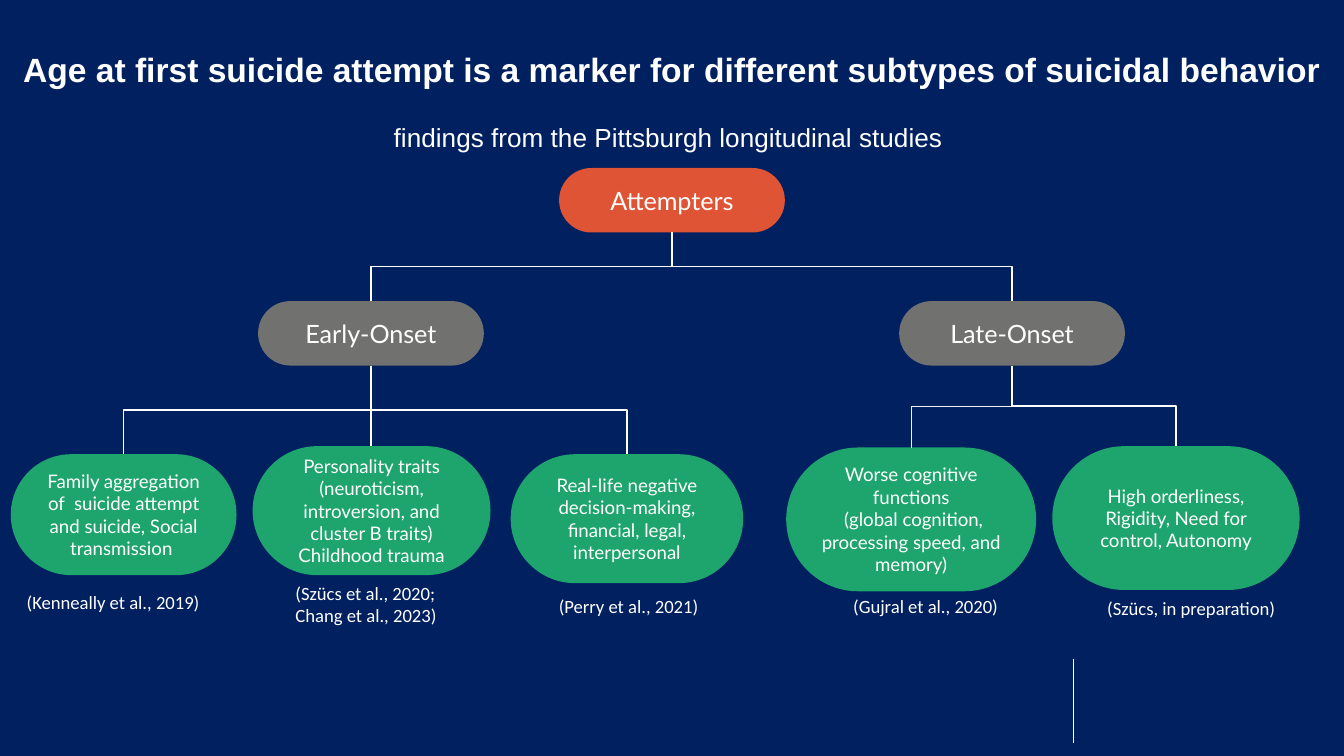
from pptx import Presentation
from pptx.dml.color import RGBColor
from pptx.enum.shapes import MSO_CONNECTOR as Link, MSO_SHAPE as Shape
from pptx.enum.text import MSO_ANCHOR as Anchor, MSO_AUTO_SIZE as AutoSize, PP_ALIGN as Align
from pptx.oxml.ns import qn
from pptx.util import Inches, Pt
from lxml import etree

NAVY = RGBColor(0x00, 0x20, 0x60)
WHITE = RGBColor(0xFF, 0xFF, 0xFF)
PALE = RGBColor(0xF2, 0xF2, 0xF2)
ORANGE = RGBColor(0xDF, 0x54, 0x34)
GRAY = RGBColor(0x71, 0x71, 0x6F)
GREEN = RGBColor(0x1E, 0xA4, 0x6D)

prs = Presentation()
prs.slide_width = Inches(10)
prs.slide_height = prs.slide_width * 9 // 16
slide = prs.slides.add_slide(prs.slide_layouts[6])
slide.background.fill.solid()
slide.background.fill.fore_color.rgb = NAVY


def add_run(paragraph, text, size, font, bold=False):
    run = paragraph.add_run()
    run.text = text
    run.font.size = Pt(size)
    run.font.name = font
    run.font.bold = bold
    run.font.color.rgb = WHITE


def style_line(line, color, width):
    """Set the stroke and switch off the theme shadow."""
    line.line.color.rgb = color
    line.line.width = Pt(width)
    etree.SubElement(line._element.spPr, qn("a:effectLst"))


# Short rule at the lower right
rule = slide.shapes.add_connector(
    Link.STRAIGHT, Inches(7.99), Inches(4.9), Inches(7.99), Inches(5.53))
style_line(rule, WHITE, 0.5)

# Title and subtitle
title = slide.shapes.add_textbox(Inches(0), Inches(-0.25), Inches(10), Inches(1.7))
frame = title.text_frame
frame.word_wrap = True
frame.vertical_anchor = Anchor.MIDDLE
frame.margin_left = frame.margin_right = frame.margin_top = frame.margin_bottom = 0
heading = frame.paragraphs[0]
heading.alignment = Align.CENTER
heading.line_spacing = 2.0
heading.space_after = Pt(6)
add_run(heading, "Age at first suicide attempt is a marker for different subtypes of suicidal behavior",
        18, "Arial", bold=True)
heading.add_line_break()
add_run(heading, "findings from the Pittsburgh longitudinal studies ", 14, "Arial")

# Tree nodes: key, left, top, width, height, fill, text size, paragraphs
nodes = [
    ("attempters", 4.16, 1.25, 1.68, 0.48, ORANGE, 13.5, ["Attempters"]),
    ("late", 6.69, 2.24, 1.68, 0.48, GRAY, 13.5, ["Late-Onset"]),
    ("early", 1.92, 2.24, 1.68, 0.48, GRAY, 13.5, ["Early-Onset"]),
    ("family", 0.08, 3.38, 1.68, 0.9, GREEN, 10,
     ["Family aggregation of  suicide attempt and suicide, Social transmission "]),
    ("personality", 1.88, 3.32, 1.77, 0.96, GREEN, 10,
     ["Personality traits", "(neuroticism, introversion, and cluster B traits)", "Childhood trauma"]),
    ("decisions", 3.8, 3.38, 1.73, 0.96, GREEN, 10,
     ["Real-life negative decision-making, financial, legal, interpersonal"]),
    ("cognition", 5.85, 3.33, 1.86, 1.07, GREEN, 10,
     ["Worse cognitive functions", " (global cognition, processing speed, and memory)"]),
    ("orderliness", 7.83, 3.32, 1.84, 1.07, GREEN, 10,
     ["High orderliness, Rigidity, Need for control, Autonomy"]),
]
placed = {}
for key, left, top, width, height, fill, size, lines in nodes:
    node = slide.shapes.add_shape(
        Shape.ROUNDED_RECTANGLE, Inches(left), Inches(top), Inches(width), Inches(height))
    node.adjustments[0] = 0.5
    node.shadow.inherit = False
    node.fill.solid()
    node.fill.fore_color.rgb = fill
    node.line.fill.background()
    frame = node.text_frame
    frame.word_wrap = True
    frame.vertical_anchor = Anchor.MIDDLE
    frame.margin_left = frame.margin_right = frame.margin_top = frame.margin_bottom = Inches(0.1)
    for i, text in enumerate(lines):
        paragraph = frame.add_paragraph() if i else frame.paragraphs[0]
        paragraph.alignment = Align.CENTER
        add_run(paragraph, text, size, "Lato")
    placed[key] = node

# Branches: bottom centre of the parent to top centre of the child
branches = [
    ("attempters", "late", WHITE), ("attempters", "early", WHITE),
    ("early", "personality", WHITE), ("early", "family", WHITE),
    ("late", "cognition", PALE), ("late", "orderliness", WHITE),
    ("early", "decisions", WHITE),
]
for parent_key, child_key, color in branches:
    parent, child = placed[parent_key], placed[child_key]
    start_x, start_y = parent.left + parent.width // 2, parent.top + parent.height
    end_x, end_y = child.left + child.width // 2, child.top
    drop, span = end_y - start_y, abs(end_x - start_x)
    if span < Inches(0.02):
        span = 0
    # An elbow leaves sideways, so it is laid out unrotated and then turned downwards
    left = (start_x + end_x - drop) // 2
    top = (start_y + end_y - span) // 2
    branch = slide.shapes.add_connector(Link.ELBOW, left, top, left + drop, top + span)
    transform = branch._element.spPr.find(qn("a:xfrm"))
    if end_x > start_x:
        transform.set("rot", "16200000")
        transform.set("flipH", "1")
    else:
        transform.set("rot", "5400000")
    style_line(branch, color, 0.75)

# Citations: left, top, width, height, vertical inset, text
citations = [
    (0.1, 4.31, 1.55, 0.37, 0.1, "(Kenneally et al., 2019)"),
    (2.1, 4.23, 1.29, 0.54, 0.1, "(Szücs et al., 2020; Chang et al., 2023)"),
    (4.06, 4.34, 1.29, 0.37, 0.1, "(Perry et al., 2021)"),
    (6.25, 4.34, 1.34, 0.37, 0.1, "(Gujral et al., 2020)"),
    (8.14, 4.39, 1.6, 0.27, 0.05, "(Szücs, in preparation)"),
]
for left, top, width, height, inset, text in citations:
    citation = slide.shapes.add_textbox(Inches(left), Inches(top), Inches(width), Inches(height))
    frame = citation.text_frame
    frame.word_wrap = True
    frame.auto_size = AutoSize.SHAPE_TO_FIT_TEXT
    frame.margin_left = frame.margin_right = Inches(0.1)
    frame.margin_top = frame.margin_bottom = Inches(inset)
    add_run(frame.paragraphs[0], text, 10, "Calibri")

prs.save("out.pptx")
